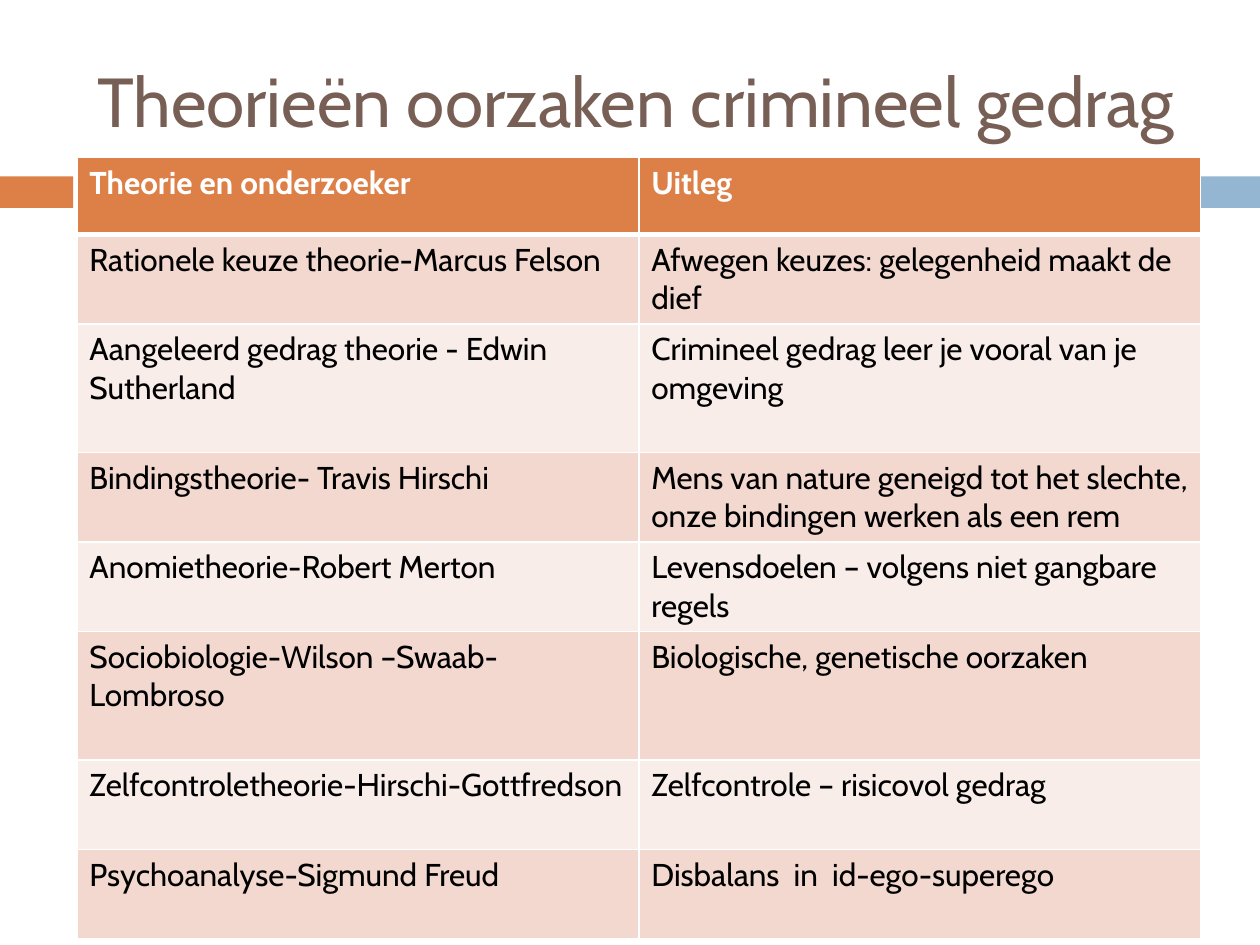
from lxml import etree
from pptx import Presentation
from pptx.dml.color import RGBColor
from pptx.enum import shapes, text
from pptx.oxml.ns import qn
from pptx.util import Inches, Pt

ORANGE = RGBColor(0xDD, 0x80, 0x47)
BLUE = RGBColor(0x94, 0xB6, 0xD2)
BROWN = RGBColor(0x77, 0x5F, 0x55)
WHITE = RGBColor(0xFF, 0xFF, 0xFF)
BLACK = RGBColor(0, 0, 0)
BAND_DARK = RGBColor(0xF2, 0xD8, 0xCF)
BAND_LIGHT = RGBColor(0xF9, 0xED, 0xE9)

ROWS = [
    ("Theorie en onderzoeker", "Uitleg"),
    ("Rationele keuze theorie-Marcus Felson", "Afwegen keuzes: gelegenheid maakt de dief"),
    ("Aangeleerd gedrag theorie - Edwin Sutherland", "Crimineel gedrag leer je vooral van je omgeving"),
    ("Bindingstheorie- Travis Hirschi",
     "Mens van nature geneigd tot het slechte, onze bindingen werken als een rem"),
    ("Anomietheorie-Robert Merton", "Levensdoelen – volgens niet gangbare regels"),
    ("Sociobiologie-Wilson –Swaab-Lombroso", "Biologische, genetische oorzaken"),
    ("Zelfcontroletheorie-Hirschi-Gottfredson", "Zelfcontrole – risicovol gedrag"),
    ("Psychoanalyse-Sigmund Freud", "Disbalans  in  id-ego-superego"),
]
HEIGHTS = [0.61, 0.71, 1.02, 0.71, 0.71, 1.02, 0.71, 0.71]


def write(tf, words, color, **fmt):
    p = tf.paragraphs[0]
    p.alignment = text.PP_ALIGN.LEFT
    r = p.add_run()
    r.text = words
    r.font.color.rgb = color
    for name, value in {"name": "Cabin", **fmt}.items():
        setattr(r.font, name, value)


def add_border(cell, side, points):
    ln = etree.SubElement(cell._tc.get_or_add_tcPr(), qn("a:ln" + side), w=str(Pt(points)))
    fill = etree.SubElement(ln, qn("a:solidFill"))
    etree.SubElement(fill, qn("a:srgbClr"), val=str(WHITE))


prs = Presentation()
prs.slide_width, prs.slide_height = Inches(10), Inches(7.5)
s = prs.slides.add_slide(prs.slide_layouts[5])

for left, width, color in [(0, 0.58, ORANGE), (0.65, 9.35, BLUE)]:
    sp = s.shapes.add_shape(shapes.MSO_SHAPE.RECTANGLE,
                            Inches(left), Inches(1.4), Inches(width), Inches(0.25))
    sp.shadow.inherit = False
    sp.fill.solid()
    sp.fill.fore_color.rgb = color
    sp.line.fill.background()

title = s.shapes.title
box = {"left": 0.67, "top": 0.25, "width": 8.92, "height": 1.08}
for name, value in box.items():
    setattr(title, name, Inches(value))
tf = title.text_frame
frame = {"word_wrap": True, "auto_size": text.MSO_AUTO_SIZE.NONE,
         "vertical_anchor": text.MSO_ANCHOR.MIDDLE}
for name, value in frame.items():
    setattr(tf, name, value)
write(tf, "Theorieën oorzaken crimineel gedrag", BROWN, size=Pt(39.6))

table = s.shapes.add_table(len(ROWS), 2, Inches(0.61), Inches(1.25),
                           Inches(8.92), Inches(sum(HEIGHTS))).table
for i, (row, height) in enumerate(zip(ROWS, HEIGHTS)):
    table.rows[i].height = Inches(height)
    header = i == 0
    fill = ORANGE if header else BAND_DARK if i % 2 else BAND_LIGHT
    for j, words in enumerate(row):
        cell = table.cell(i, j)
        for side in "LRTB":
            heavy = (i, side) in [(0, "B"), (1, "T")]
            add_border(cell, side, 3 if heavy else 1)
        cell.fill.solid()
        cell.fill.fore_color.rgb = fill
        write(cell.text_frame, words, WHITE if header else BLACK, size=Pt(18), bold=header)

prs.save("out.pptx")
